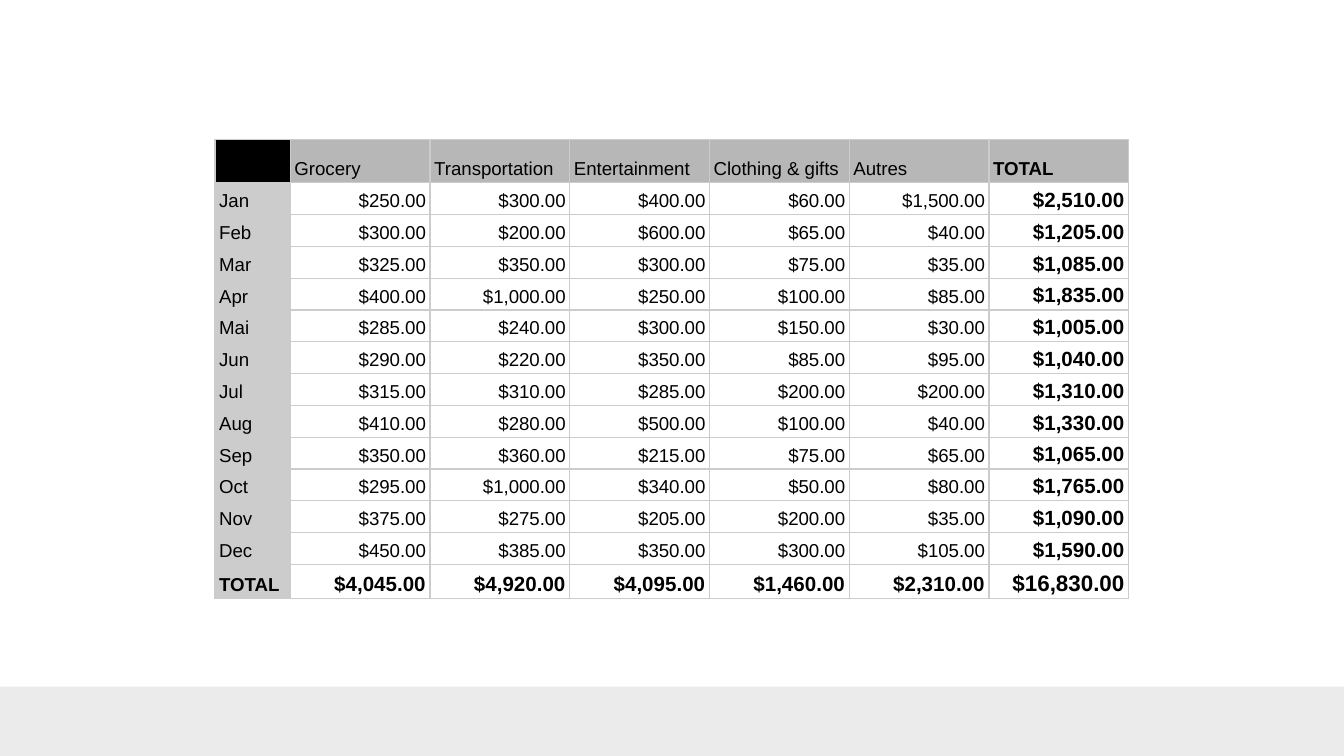
"""Build a slide with a table of monthly spending."""
from lxml.etree import SubElement
from pptx import Presentation
from pptx.dml.color import RGBColor
from pptx.enum.shapes import MSO_SHAPE
from pptx.enum.text import MSO_ANCHOR, PP_ALIGN
from pptx.oxml.ns import qn
from pptx.util import Inches, Pt

HEADS = ["Grocery", "Transportation", "Entertainment", "Clothing & gifts", "Autres"]
MONTHS = {
    "Jan": (250, 300, 400, 60, 1500),
    "Feb": (300, 200, 600, 65, 40),
    "Mar": (325, 350, 300, 75, 35),
    "Apr": (400, 1000, 250, 100, 85),
    "Mai": (285, 240, 300, 150, 30),
    "Jun": (290, 220, 350, 85, 95),
    "Jul": (315, 310, 285, 200, 200),
    "Aug": (410, 280, 500, 100, 40),
    "Sep": (350, 360, 215, 75, 65),
    "Oct": (295, 1000, 340, 50, 80),
    "Nov": (375, 275, 205, 200, 35),
    "Dec": (450, 385, 350, 300, 105),
}
WIDTHS = [0.56] + [1.04] * 6
HEIGHTS = [0.32] + [0.22] * 12 + [0.24]


def paint(fill, color):
    fill.solid()
    fill.fore_color.rgb = RGBColor.from_string(color)


def edge(cell, color="CCCCCC", width=0.75):
    props = cell._tc.get_or_add_tcPr()
    for side in ("lnL", "lnR", "lnT", "lnB"):
        line = SubElement(props, qn(f"a:{side}"), w=str(Pt(width)))
        solid = SubElement(line, qn("a:solidFill"))
        SubElement(solid, qn("a:srgbClr"), val=color)


def write(cell, text, size=10, bold=False, align=PP_ALIGN.LEFT):
    para = cell.text_frame.paragraphs[0]
    para.alignment = align
    para.line_spacing = 1.15
    run = para.add_run()
    run.text = text
    run.font.name = "Arial"
    run.font.size = Pt(size)
    run.font.bold = bold
    run.font.color.rgb = RGBColor.from_string("000000")


def style(cell, row, col):
    cell.vertical_anchor = MSO_ANCHOR.BOTTOM
    cell.margin_left = cell.margin_right = Pt(2.25)
    cell.margin_top = cell.margin_bottom = Pt(1.5 if row or col else 0)
    edge(cell)
    if row and col:
        cell.fill.background()
    elif row:
        paint(cell.fill, "CCCCCC")
    else:
        paint(cell.fill, "B7B7B7" if col else "000000")


def main():
    deck = Presentation()
    deck.slide_width = Inches(10)
    deck.slide_height = deck.slide_width * 9 // 16
    slide = deck.slides.add_slide(deck.slide_layouts[6])

    top = Inches(5.11)
    band = slide.shapes.add_shape(
        MSO_SHAPE.RECTANGLE, 0, top, deck.slide_width, deck.slide_height - top)
    band.shadow.inherit = False
    band.line.fill.background()
    paint(band.fill, "EBEBEB")

    sums = [sum(part) for part in zip(*MONTHS.values())]
    body = [(name, *costs, sum(costs)) for name, costs in MONTHS.items()]
    rows = [("", *HEADS, "TOTAL"), *body, ("TOTAL", *sums, sum(sums))]
    span = Inches(sum(WIDTHS))
    table = slide.shapes.add_table(
        len(HEIGHTS), len(WIDTHS), (deck.slide_width - span) // 2,
        Inches(1.04), span, Inches(sum(HEIGHTS))).table
    table.first_row = table.horz_banding = False
    for col, width in zip(table.columns, WIDTHS):
        col.width = Inches(width)
    for row, height in zip(table.rows, HEIGHTS):
        row.height = Inches(height)

    for r, row in enumerate(rows):
        for c, value in enumerate(row):
            cell = table.cell(r, c)
            style(cell, r, c)
            ends = (r == len(rows) - 1) + (c == len(row) - 1)
            if r and c:
                write(cell, f"${value:,.2f}", size=10 + ends,
                      bold=ends > 0, align=PP_ALIGN.RIGHT)
            elif value:
                write(cell, value, bold=ends > 0)

    deck.save("out.pptx")


if __name__ == "__main__":
    main()
